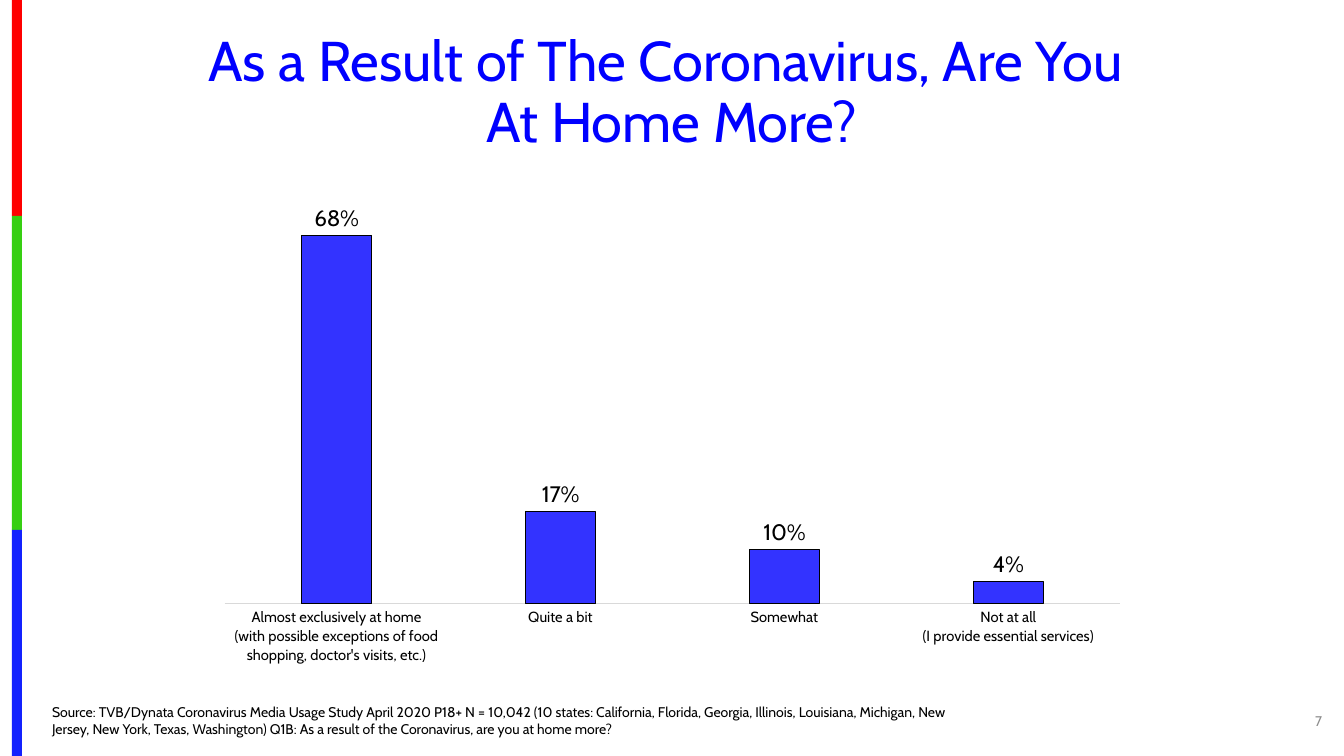
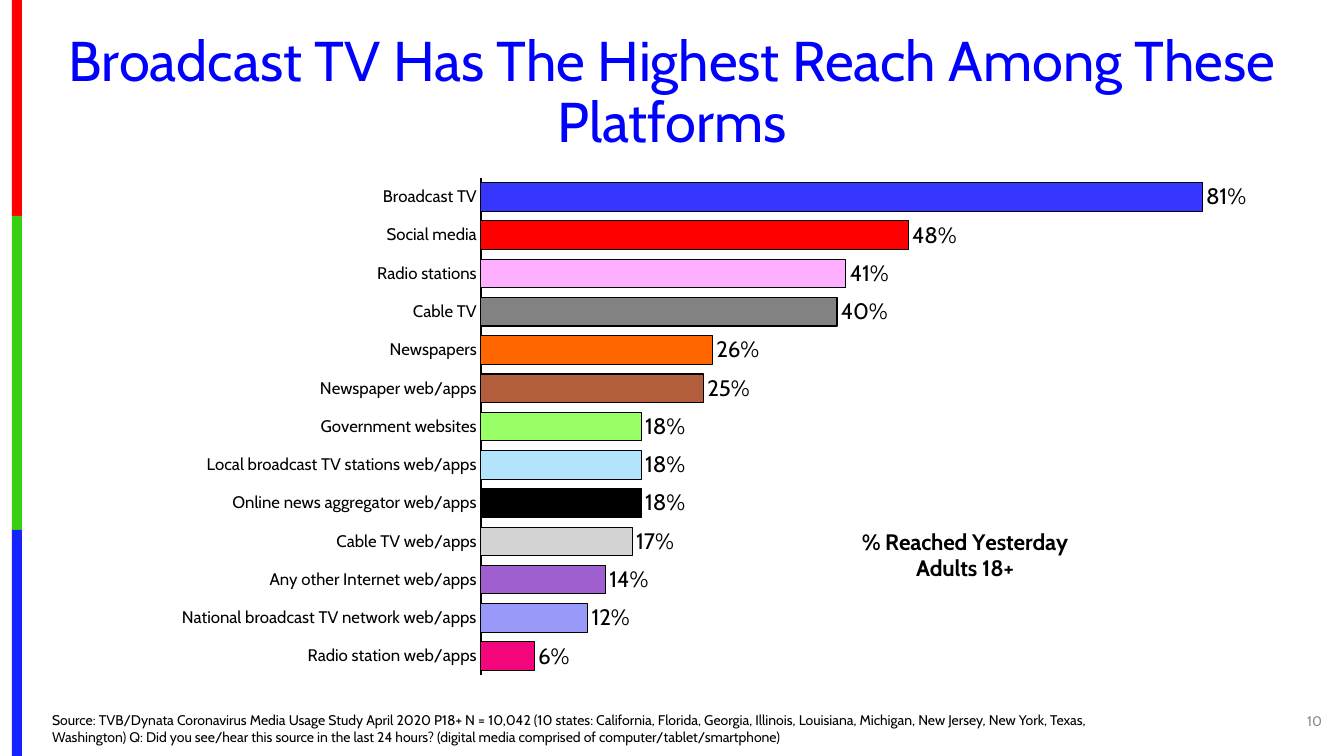
import dataclasses

import pptx
import pptx.chart.data
import pptx.dml.color
import pptx.enum.chart
import pptx.enum.shapes
import pptx.enum.text
import pptx.oxml
import pptx.oxml.ns
import pptx.util

SCALE = 914400 / 100.8


@dataclasses.dataclass(frozen=True)
class Theme:
    font: str = "Cabin"
    title: str = "0000FF"
    ink: str = "000000"
    page: str = "8C8C8C"
    bands: tuple = ("FE0000", "36CF12", "1322FE")
    title_size: float = 40
    label_size: float = 16
    small_size: float = 10


THEME = Theme()
RGB = pptx.dml.color.RGBColor.from_string
ALIGN = pptx.enum.text.PP_ALIGN
ANCHOR = pptx.enum.text.MSO_ANCHOR
CHART = pptx.enum.chart.XL_CHART_TYPE
qn = pptx.oxml.ns.qn


def style(font, size, color=THEME.ink, bold=False):
    font.name = THEME.font
    font.size = pptx.util.Pt(size)
    font.bold = bold
    font.color.rgb = RGB(color)


def set_layout(parent, index, target, **fractions):
    for old in parent.findall(qn("c:layout")):
        parent.remove(old)
    inner = f'<c:layoutTarget val="{target}"/>' if target else ""
    modes = "".join(f'<c:{axis}Mode val="edge"/>' for axis in "xy")
    values = "".join(f'<c:{key} val="{value}"/>' for key, value in fractions.items())
    parent.insert(index, pptx.oxml.parse_xml(
        f'<c:layout {pptx.oxml.ns.nsdecls("c")}><c:manualLayout>'
        f"{inner}{modes}{values}</c:manualLayout></c:layout>"))


STUDY = ("Source: TVB/Dynata Coronavirus Media Usage Study April 2020 P18+ N = 10,042 "
         "(10 states: California, Florida, Georgia, Illinois, Louisiana, Michigan, "
         "New Jersey, New York, Texas, Washington) ")

SLIDES = [
    dict(
        title=["As a Result of The Coronavirus, Are You ", "At Home More?"],
        question="Q1B: As a result of the Coronavirus, are you at home more?",
        source_box=(42, 715, 953, 27),
        page="7",
        kind=CHART.COLUMN_CLUSTERED,
        chart_box=(206, 160, 933, 516),
        plot=dict(x=0.02, y=0.02, w=0.96, h=0.84),
        maximum=0.8, gap=219, overlap=-27,
        axis_size=10.5, axis_color="D9D9D9", axis_width=0.75, reverse=False,
        caption=[],
        answers=[
            ("Almost exclusively at home\n(with possible exceptions of food shopping, "
             "doctor's visits, etc.)", 0.68, "3333FF"),
            ("Quite a bit", 0.17, "3333FF"),
            ("Somewhat", 0.1, "3333FF"),
            ("Not at all\n(I provide essential services)", 0.04, "3333FF"),
        ],
    ),
    dict(
        title=["Broadcast TV Has The Highest Reach Among These Platforms"],
        question="Q: Did you see/hear this source in the last 24 hours? "
                 "(digital media comprised of computer/tablet/smartphone)",
        source_box=(42, 723, 1082, 27),
        page="10",
        kind=CHART.BAR_CLUSTERED,
        chart_box=(56, 151, 1235, 526),
        plot=dict(x=0.344, y=0.051, w=0.649, h=0.946),
        maximum=0.9, gap=34, overlap=0,
        axis_size=12, axis_color=THEME.ink, axis_width=1.5, reverse=True,
        caption=["% Reached Yesterday", "Adults 18+"],
        answers=[
            ("Broadcast TV", 0.81, "3636FF"),
            ("Social media", 0.48, "FF0000"),
            ("Radio stations", 0.41, "FFAFFF"),
            ("Cable TV", 0.4, "828282"),
            ("Newspapers", 0.26, "FF6600"),
            ("Newspaper web/apps", 0.25, "B25E3C"),
            ("Government websites", 0.18, "99FF66"),
            ("Local broadcast TV stations web/apps", 0.18, "B2E5FC"),
            ("Online news aggregator web/apps", 0.18, "000000"),
            ("Cable TV web/apps", 0.17, "D3D3D3"),
            ("Any other Internet web/apps", 0.14, "9F5FCF"),
            ("National broadcast TV network web/apps", 0.12, "9999F9"),
            ("Radio station web/apps", 0.06, "F3057C"),
        ],
    ),
]

deck = pptx.Presentation()
deck.slide_width = round(1344 * SCALE)
deck.slide_height = round(756 * SCALE)

for number, content in enumerate(SLIDES):
    slide = deck.slides.add_slide(deck.slide_layouts[1])

    if number == 0:
        edges = (0, 216, 530, 756)
        for top, bottom, color in zip(edges, edges[1:], THEME.bands):
            band = slide.shapes.add_shape(
                pptx.enum.shapes.MSO_SHAPE.RECTANGLE,
                *(round(n * SCALE) for n in (12, top, 10, bottom - top)))
            band.shadow.inherit = False
            band.fill.solid()
            band.fill.fore_color.rgb = RGB(color)
            band.line.fill.background()
            deck.slide_master.shapes.element.append(band.element)

    heading = slide.shapes.title
    source = slide.placeholders[1]
    page = slide.shapes.add_textbox(*(round(n * SCALE) for n in (1272, 701, 60, 40)))
    for holder, box, lines, align, anchor, size, color in (
        (heading, (42, 28, 1260, 132), content["title"], ALIGN.CENTER, ANCHOR.MIDDLE,
         THEME.title_size, THEME.title),
        (source, content["source_box"], [STUDY + content["question"]], ALIGN.LEFT,
         ANCHOR.BOTTOM, THEME.small_size, THEME.ink),
        (page, (1272, 701, 60, 40), [content["page"]], ALIGN.RIGHT, ANCHOR.MIDDLE,
         THEME.small_size, THEME.page),
    ):
        holder.left, holder.top, holder.width, holder.height = (
            round(n * SCALE) for n in box)
        frame = holder.text_frame
        frame.word_wrap = True
        frame.auto_size = pptx.enum.text.MSO_AUTO_SIZE.NONE
        frame.vertical_anchor = anchor
        paragraph = frame.paragraphs[0]
        paragraph.alignment = align
        paragraph.space_before = pptx.util.Pt(0)
        paragraph.line_spacing = 0.9 if holder is heading else 1.0
        if holder is source:
            properties = paragraph._p.get_or_add_pPr()
            properties.set("marL", "0")
            properties.set("indent", "0")
            properties.append(pptx.oxml.parse_xml(
                f'<a:buNone {pptx.oxml.ns.nsdecls("a")}/>'))
        for position, line in enumerate(lines):
            if position:
                paragraph.add_line_break()
            run = paragraph.add_run()
            run.text = line
            style(run.font, size, color)

    names, shares, colors = zip(*content["answers"])
    data = pptx.chart.data.CategoryChartData(number_format="0%")
    data.categories = names
    data.add_series("Series 1", shares)
    chart = slide.shapes.add_chart(
        content["kind"], *(round(n * SCALE) for n in content["chart_box"]), data).chart
    style(chart.font, THEME.small_size)
    chart.has_legend = False
    chart.has_title = bool(content["caption"])
    set_layout(chart.element.find(".//" + qn("c:plotArea")), 0, "inner", **content["plot"])

    if content["caption"]:
        caption = chart.chart_title.text_frame
        for position, line in enumerate(content["caption"]):
            paragraph = caption.add_paragraph() if position else caption.paragraphs[0]
            run = paragraph.add_run()
            run.text = line
            style(run.font, THEME.label_size, bold=True)
        set_layout(chart.element.find(".//" + qn("c:title")), 1, None, x=0.65, y=0.71)

    scale_axis = chart.value_axis
    scale_axis.minimum_scale = 0
    scale_axis.maximum_scale = content["maximum"]
    scale_axis.has_major_gridlines = False
    scale_axis.visible = False

    answer_axis = chart.category_axis
    answer_axis.reverse_order = content["reverse"]
    answer_axis.major_tick_mark = pptx.enum.chart.XL_TICK_MARK.NONE
    answer_axis.minor_tick_mark = pptx.enum.chart.XL_TICK_MARK.NONE
    answer_axis.format.line.color.rgb = RGB(content["axis_color"])
    answer_axis.format.line.width = pptx.util.Pt(content["axis_width"])
    style(answer_axis.tick_labels.font, content["axis_size"])

    bars = chart.plots[0]
    bars.vary_by_categories = False
    bars.gap_width = content["gap"]
    bars.overlap = content["overlap"]
    bars.has_data_labels = True
    labels = bars.data_labels
    labels.show_value = True
    labels.number_format = "0%"
    labels.number_format_is_linked = False
    labels.position = pptx.enum.chart.XL_LABEL_POSITION.OUTSIDE_END
    style(labels.font, THEME.label_size)

    series = bars.series[0]
    series.invert_if_negative = False
    for position, color in enumerate(colors):
        bar = series.points[position].format
        bar.fill.solid()
        bar.fill.fore_color.rgb = RGB(color)
        bar.line.color.rgb = RGB(THEME.ink)
        bar.line.width = pptx.util.Pt(0.75)

deck.save("out.pptx")
